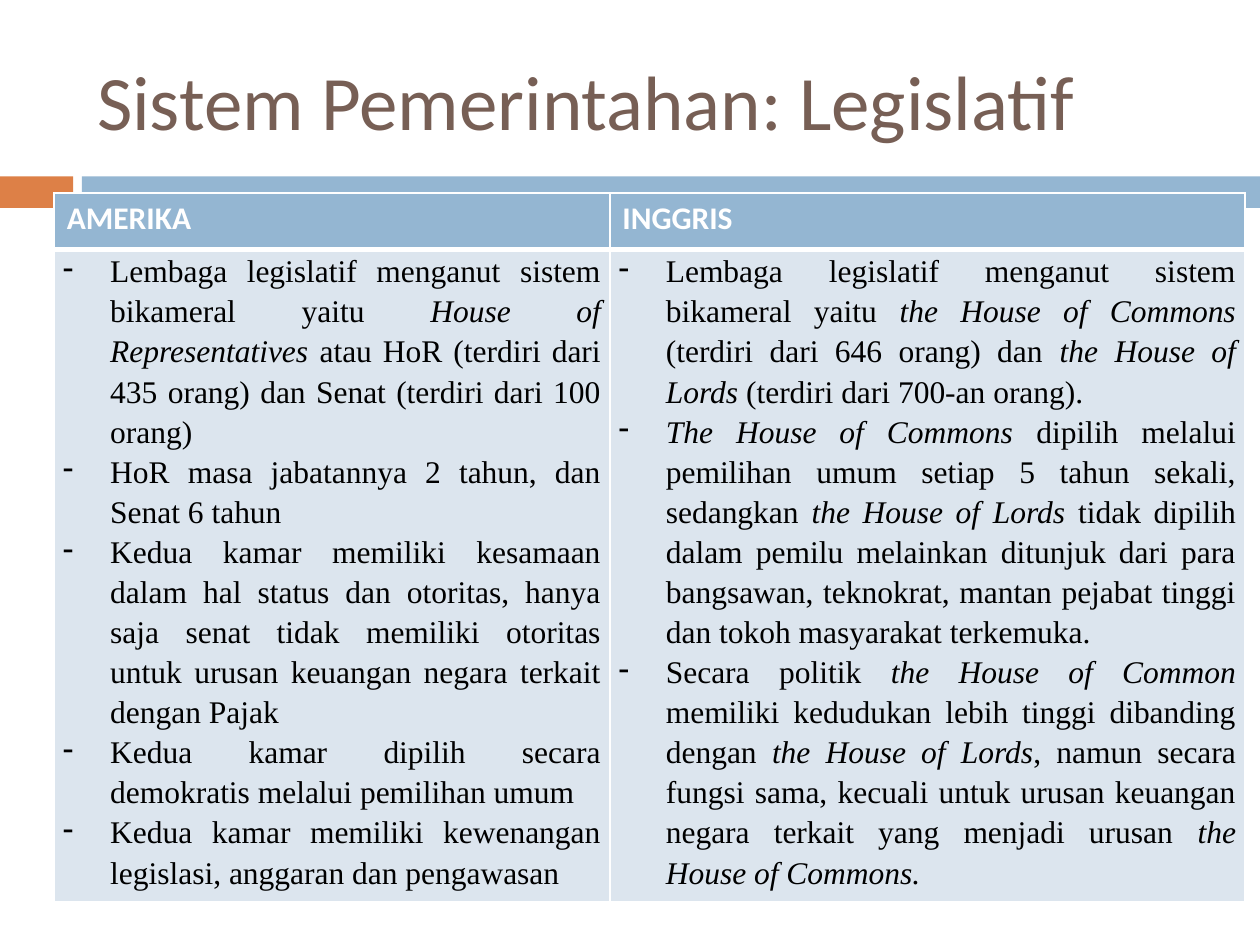
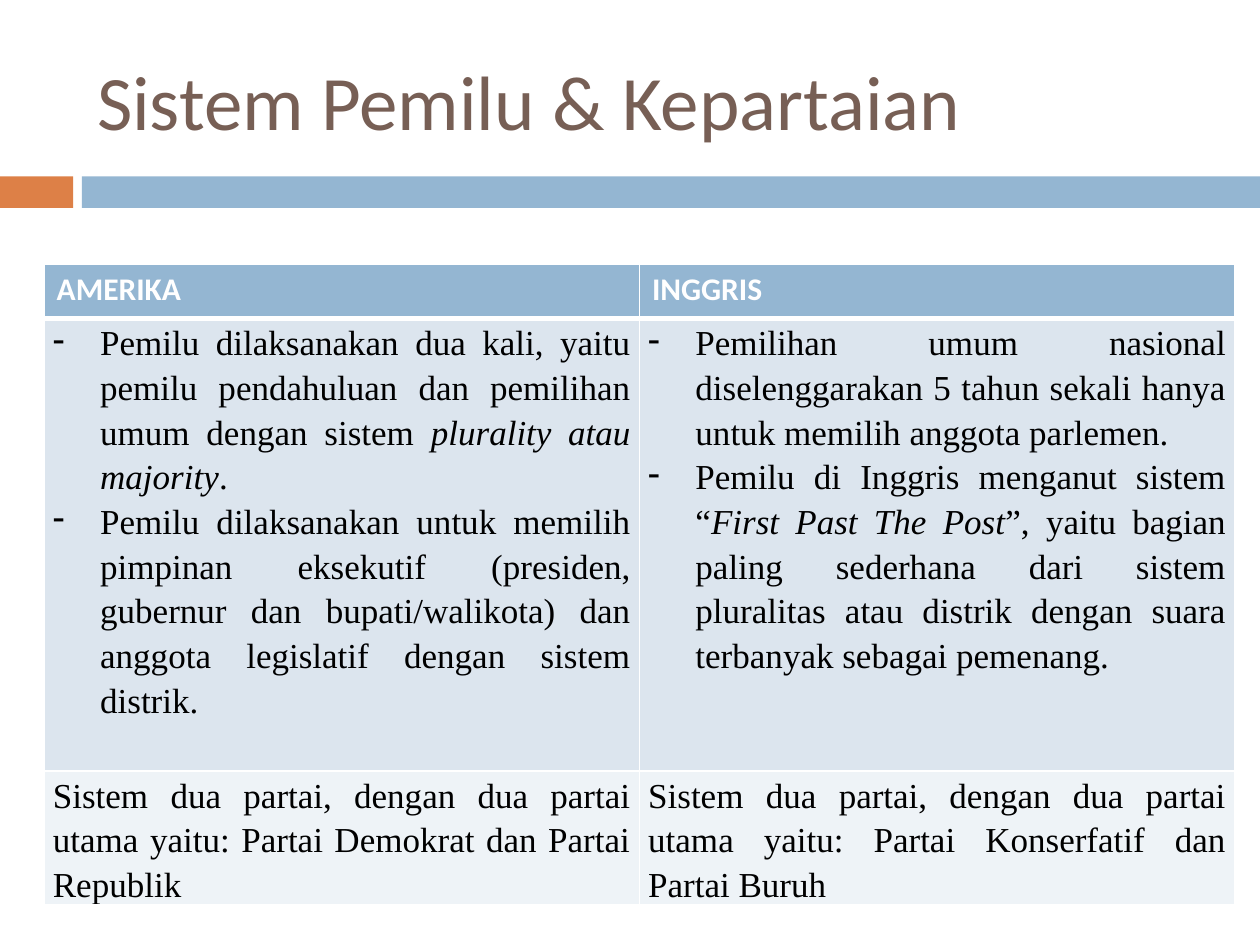
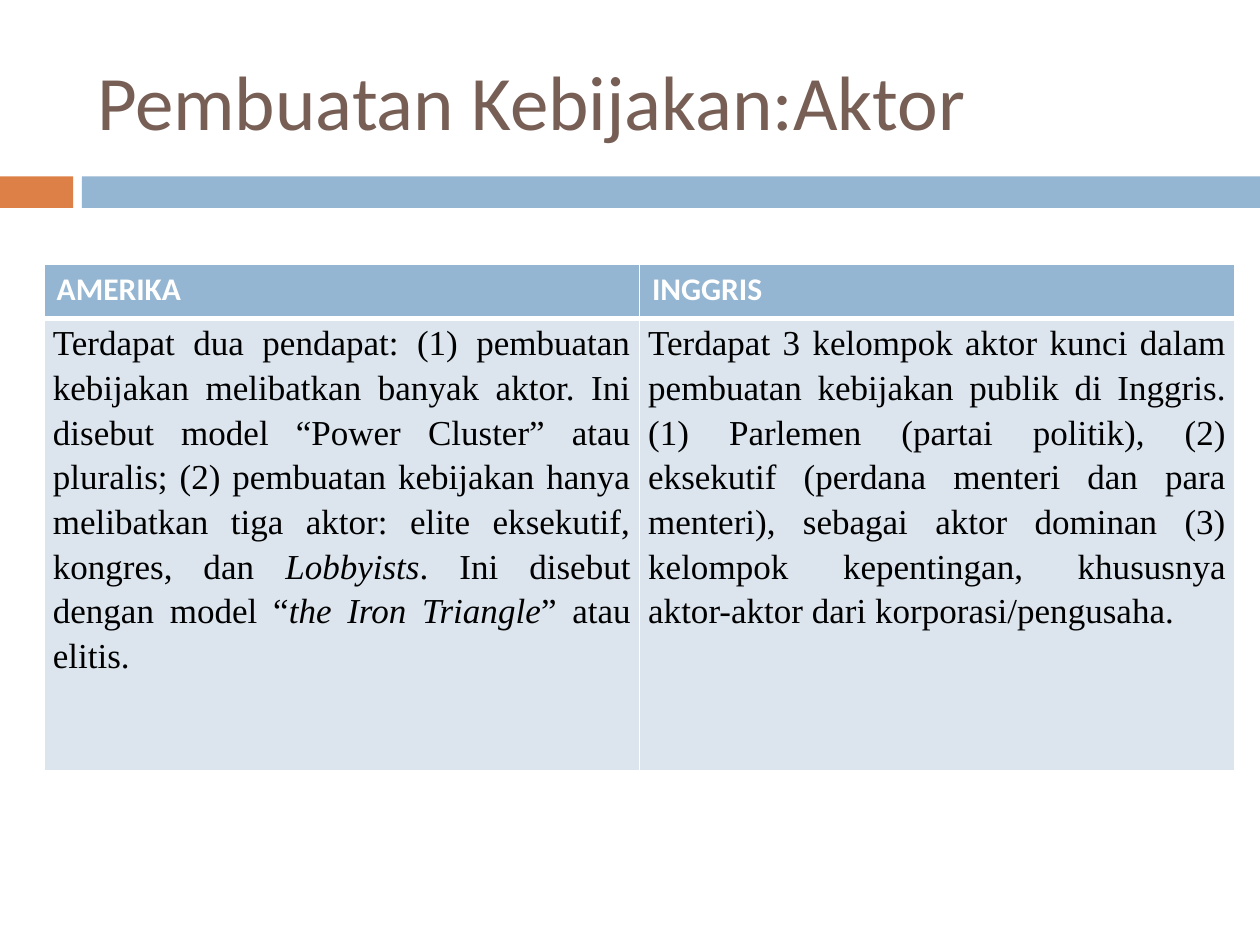
"""Build three slides comparing government in America and in England."""
import dataclasses
import itertools

import lxml.etree
import pptx
import pptx.dml.color
import pptx.enum.shapes
import pptx.enum.text
import pptx.oxml
import pptx.oxml.ns
import pptx.slide
import pptx.table
import pptx.text.text
import pptx.util

COLORS = {
    "accent": "DD8047",
    "band": "94B6D2",
    "title": "775F55",
    "odd_row": "DCE5EE",
    "even_row": "EEF3F7",
    "paper": "FFFFFF",
    "ink": "000000",
}
HEADING_FONT, BODY_FONT = "Calibri", "Times New Roman"
COUNTRIES = ("AMERIKA", "INGGRIS")
SLIDE_WIDTH, SLIDE_HEIGHT = pptx.util.Inches(10), pptx.util.Inches(7.5)
GRID_COLUMNS, GRID_ROWS = 100, 75
THIN, THICK = 1, 3


@dataclasses.dataclass(frozen=True)
class Area:
    """A rectangle in grid columns and rows."""

    column: float
    row: float
    columns: float
    rows: float

    def box(self) -> tuple[int, int, int, int]:
        """Return left, top, width and height as lengths."""
        return across(self.column), down(self.row), across(self.columns), down(self.rows)


@dataclasses.dataclass(frozen=True)
class Band:
    """A coloured bar under the title."""

    area: Area
    color: str


@dataclasses.dataclass(frozen=True)
class Topic:
    """One row of the comparison, with asterisks around italic words."""

    america: tuple[str, ...]
    england: tuple[str, ...]
    bulleted: bool = False


@dataclasses.dataclass(frozen=True)
class Comparison:
    """A slide with a title and a table of two countries."""

    title: str
    topics: tuple[Topic, ...]
    topic_rows: tuple[float, ...]
    left: float = 3.5
    top: float = 21
    widths: tuple[float, float] = (47.25, 47.25)
    header_rows: float = 4.3
    text_size: int = 20


BANDS = (
    Band(Area(0, 14, 5.8, 2.5), "accent"),
    Band(Area(6.5, 14, 93.5, 2.5), "band"),
)
TITLE_AREA = Area(6.7, 2.5, 89.2, 10.8)

COMPARISONS = (
    Comparison(
        "Sistem Pemerintahan: Legislatif",
        (
            Topic(
                (
                    "Lembaga legislatif menganut sistem bikameral yaitu *House of Representatives *"
                    "atau HoR (terdiri dari 435 orang) dan Senat (terdiri dari 100 orang)",
                    "HoR masa jabatannya 2 tahun, dan Senat 6 tahun",
                    "Kedua kamar memiliki kesamaan dalam hal status dan otoritas, hanya saja senat "
                    "tidak memiliki otoritas untuk urusan keuangan negara terkait dengan Pajak",
                    "Kedua kamar dipilih secara demokratis melalui pemilihan umum",
                    "Kedua kamar memiliki kewenangan legislasi, anggaran dan pengawasan",
                ),
                (
                    "Lembaga legislatif menganut sistem bikameral yaitu *the House of Commons *"
                    "(terdiri dari 646 orang) dan *the House of Lords* (terdiri dari 700-an orang).",
                    "*The House of Commons *dipilih melalui pemilihan umum setiap 5 tahun sekali, "
                    "sedangkan *the House of Lords *tidak dipilih dalam pemilu melainkan ditunjuk "
                    "dari para bangsawan, teknokrat, mantan pejabat tinggi dan tokoh masyarakat "
                    "terkemuka.",
                    "Secara politik *the House of Common *memiliki kedudukan lebih tinggi dibanding "
                    "dengan *the House of Lords*, namun secara fungsi sama, kecuali untuk urusan "
                    "keuangan negara terkait yang menjadi urusan *the House of Commons.*",
                ),
                bulleted=True,
            ),
        ),
        topic_rows=(51.8,),
        left=4.3,
        top=15.3,
        widths=(44.1, 50.4),
        header_rows=4.5,
        text_size=18,
    ),
    Comparison(
        "Sistem Pemilu & Kepartaian",
        (
            Topic(
                (
                    "Pemilu dilaksanakan dua kali, yaitu pemilu pendahuluan dan pemilihan umum "
                    "dengan sistem *plurality atau majority*.",
                    "Pemilu dilaksanakan untuk memilih pimpinan eksekutif (presiden, gubernur dan "
                    "bupati/walikota) dan anggota legislatif dengan sistem distrik.",
                ),
                (
                    "Pemilihan umum nasional diselenggarakan 5 tahun sekali hanya untuk memilih "
                    "anggota parlemen.",
                    "Pemilu di Inggris menganut sistem “*First Past The Post*”, yaitu bagian paling "
                    "sederhana dari sistem pluralitas atau distrik dengan suara terbanyak sebagai "
                    "pemenang.",
                ),
                bulleted=True,
            ),
            Topic(
                ("Sistem dua partai, dengan dua partai utama yaitu: Partai Demokrat dan Partai "
                 "Republik",),
                ("Sistem dua partai, dengan dua partai utama yaitu: Partai Konserfatif dan Partai "
                 "Buruh",),
            ),
        ),
        topic_rows=(35.9, 8.7),
    ),
    Comparison(
        "Pembuatan Kebijakan:Aktor",
        (
            Topic(
                ("Terdapat dua pendapat: (1) pembuatan kebijakan melibatkan banyak aktor. Ini "
                 "disebut model “Power Cluster” atau pluralis; (2) pembuatan kebijakan hanya "
                 "melibatkan tiga aktor: elite eksekutif, kongres, dan *Lobbyists*. Ini disebut "
                 "dengan model “*the Iron Triangle*” atau elitis.",),
                ("Terdapat 3 kelompok aktor kunci dalam pembuatan kebijakan publik di Inggris. (1) "
                 "Parlemen (partai politik), (2) eksekutif (perdana menteri dan para menteri), "
                 "sebagai aktor dominan (3) kelompok kepentingan, khususnya aktor-aktor dari "
                 "korporasi/pengusaha.",),
            ),
        ),
        topic_rows=(35.9,),
    ),
)


def across(columns: float) -> int:
    """Return the length of some grid columns."""
    return round(SLIDE_WIDTH * columns / GRID_COLUMNS)


def down(rows: float) -> int:
    """Return the length of some grid rows."""
    return round(SLIDE_HEIGHT * rows / GRID_ROWS)


def rgb(color: str) -> pptx.dml.color.RGBColor:
    """Look up a colour by its role."""
    return pptx.dml.color.RGBColor.from_string(COLORS[color])


def add_run(paragraph: pptx.text.text._Paragraph, words: str, font: str, size: int,
            color: str, bold: bool = False, italic: bool = False) -> None:
    """Add one formatted run."""
    run = paragraph.add_run()
    run.text = words
    run.font.name = font
    run.font.size = pptx.util.Pt(size)
    run.font.color.rgb = rgb(color)
    run.font.bold = bold
    run.font.italic = italic


def add_bullet(paragraph: pptx.text.text._Paragraph) -> None:
    """Give a paragraph a hanging dash."""
    properties = paragraph._p.get_or_add_pPr()
    indent = across(3.75)
    properties.set("marL", str(indent))
    properties.set("indent", str(-indent))
    lxml.etree.SubElement(properties, pptx.oxml.ns.qn("a:buFontTx"))
    lxml.etree.SubElement(properties, pptx.oxml.ns.qn("a:buChar")).set("char", "-")


def set_borders(cell: pptx.table._Cell, top: int, bottom: int) -> None:
    """Draw the four white borders of a cell."""
    properties = cell._tc.get_or_add_tcPr()
    for side, points in zip("LRTB", (THIN, THIN, top, bottom)):
        properties.append(pptx.oxml.parse_xml(
            f'<a:ln{side} {pptx.oxml.ns.nsdecls("a")} w="{pptx.util.Pt(points)}">'
            f'<a:solidFill><a:srgbClr val="{COLORS["paper"]}"/></a:solidFill></a:ln{side}>'
        ))


def fill_cell(cell: pptx.table._Cell, color: str) -> None:
    """Fill a cell with one colour."""
    cell.fill.solid()
    cell.fill.fore_color.rgb = rgb(color)


def write_header(cell: pptx.table._Cell, country: str) -> None:
    """Write the name of a country at the head of its column."""
    set_borders(cell, THIN, THICK)
    fill_cell(cell, "band")
    add_run(cell.text_frame.paragraphs[0], country, HEADING_FONT, 18, "paper", bold=True)


def write_points(cell: pptx.table._Cell, points: tuple[str, ...], bulleted: bool, size: int) -> None:
    """Write justified paragraphs, switching italics at each asterisk."""
    cell.margin_left = cell.margin_right = across(0.7)
    cell.margin_top = cell.margin_bottom = 0
    frame = cell.text_frame
    for number, point in enumerate(points):
        paragraph = frame.add_paragraph() if number else frame.paragraphs[0]
        if bulleted:
            add_bullet(paragraph)
        paragraph.alignment = pptx.enum.text.PP_ALIGN.JUSTIFY
        paragraph.line_spacing = 1.15
        for words, italic in zip(point.split("*"), itertools.cycle((False, True))):
            if words:
                add_run(paragraph, words, BODY_FONT, size, "ink", italic=italic)


def add_comparison_table(slide: pptx.slide.Slide, comparison: Comparison) -> None:
    """Add the table of both countries."""
    heights = (comparison.header_rows, *comparison.topic_rows)
    area = Area(comparison.left, comparison.top, sum(comparison.widths), sum(heights))
    table = slide.shapes.add_table(len(heights), len(COUNTRIES), *area.box()).table
    table.horz_banding = False
    for column, width in zip(table.columns, comparison.widths):
        column.width = across(width)
    for row, height in zip(table.rows, heights):
        row.height = down(height)
    for column, country in enumerate(COUNTRIES):
        write_header(table.cell(0, column), country)
    for number, topic in enumerate(comparison.topics, start=1):
        for column, points in enumerate((topic.america, topic.england)):
            cell = table.cell(number, column)
            set_borders(cell, THICK if number == 1 else THIN, THIN)
            fill_cell(cell, "odd_row" if number % 2 else "even_row")
            write_points(cell, points, topic.bulleted, comparison.text_size)


def add_title(slide: pptx.slide.Slide, heading: str) -> None:
    """Place and write the slide title."""
    title = slide.shapes.title
    title.left, title.top, title.width, title.height = TITLE_AREA.box()
    frame = title.text_frame
    frame.word_wrap = True
    frame.auto_size = pptx.enum.text.MSO_AUTO_SIZE.NONE
    frame.vertical_anchor = pptx.enum.text.MSO_ANCHOR.MIDDLE
    paragraph = frame.paragraphs[0]
    paragraph.alignment = pptx.enum.text.PP_ALIGN.LEFT
    add_run(paragraph, heading, HEADING_FONT, 44, "title")


def move_bands_to_layout(slide: pptx.slide.Slide) -> None:
    """Draw the bands and hand them to the layout that all slides share."""
    for band in BANDS:
        bar = slide.shapes.add_shape(pptx.enum.shapes.MSO_SHAPE.RECTANGLE, *band.area.box())
        bar.shadow.inherit = False
        bar.fill.solid()
        bar.fill.fore_color.rgb = rgb(band.color)
        bar.line.fill.background()
        slide.slide_layout.shapes.element.append(bar.element)


def main() -> None:
    """Build and save the presentation."""
    presentation = pptx.Presentation()
    presentation.slide_width, presentation.slide_height = SLIDE_WIDTH, SLIDE_HEIGHT
    title_only = presentation.slide_layouts.get_by_name("Title Only")
    for comparison in COMPARISONS:
        slide = presentation.slides.add_slide(title_only)
        add_title(slide, comparison.title)
        add_comparison_table(slide, comparison)
    move_bands_to_layout(presentation.slides[0])
    presentation.save("out.pptx")


if __name__ == "__main__":
    main()
